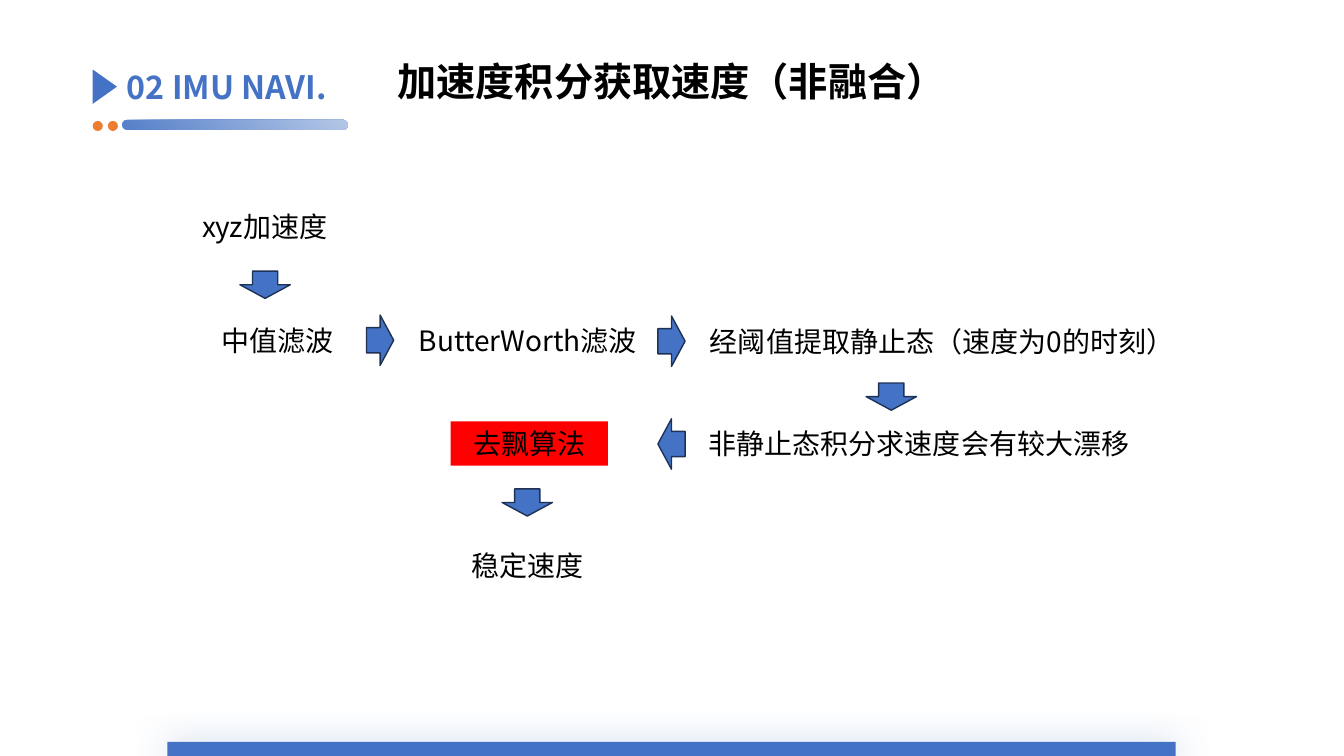
from lxml import etree
from pptx import Presentation
from pptx.dml.color import RGBColor
from pptx.enum import shapes, text
from pptx.oxml import ns
from pptx.util import Inches, Pt

FONT = "Noto Sans CJK SC"
COLORS = {
    "blue": "4472C4", "navy": "1E3256", "orange": "ED7D31", "red": "FF0000",
    "black": "000000", "bar_start": "557FC9", "bar_end": "B4C7E7",
}
KINDS = shapes.MSO_SHAPE


def add_figure(kind, box, fill, rotation=0, outline=None):
    figure = slide.shapes.add_shape(kind, *map(Inches, box))
    figure.shadow.inherit = False
    figure.rotation = rotation
    figure.fill.solid()
    figure.fill.fore_color.rgb = RGBColor.from_string(COLORS[fill])
    if outline:
        figure.line.color.rgb = RGBColor.from_string(COLORS[outline])
        figure.line.width = Pt(1)
    else:
        figure.line.fill.background()
    return figure


def write(holder, words, size, color="black", bold=False, centred=True):
    frame = holder.text_frame
    frame.word_wrap = True
    if centred:
        frame.auto_size = text.MSO_AUTO_SIZE.SHAPE_TO_FIT_TEXT
    else:
        frame.vertical_anchor = text.MSO_ANCHOR.MIDDLE
    paragraph = frame.paragraphs[0]
    paragraph.alignment = text.PP_ALIGN.CENTER if centred else text.PP_ALIGN.LEFT
    run = paragraph.add_run()
    run.text = words
    run.font.color.rgb = RGBColor.from_string(COLORS[color])
    for key, value in {"size": Pt(size), "bold": bold, "name": FONT}.items():
        setattr(run.font, key, value)
    east_asian = etree.SubElement(run.font._element, ns.qn("a:ea"))
    east_asian.set("typeface", FONT)


deck = Presentation()
deck.slide_width, deck.slide_height = Inches(13.33), Inches(7.5)
slide = deck.slides.add_slide(deck.slide_layouts[6])

# Footer band with a soft glow
footer = add_figure(KINDS.RECTANGLE, (6.59, 2.43, 0.14, 10), "blue", 90)
effects = footer._element.spPr.find(ns.qn("a:effectLst"))
glow = etree.SubElement(effects, ns.qn("a:outerShdw"), blurRad=str(Pt(28)),
                        dist=str(Pt(3)), dir="5400000", algn="t", rotWithShape="0")
glow_color = etree.SubElement(glow, ns.qn("a:srgbClr"), val=COLORS["blue"])
etree.SubElement(glow_color, ns.qn("a:alpha"), val="40000")

# Section label
add_figure(KINDS.ISOSCELES_TRIANGLE, (0.87, 0.74, 0.34, 0.24), "blue", 90)
section = slide.shapes.add_textbox(*map(Inches, (1.16, 0.53, 3.62, 0.65)))
write(section, "02 IMU NAVI.", 23, "blue", bold=True, centred=False)
for dot_left in (0.92, 1.07):
    add_figure(KINDS.OVAL, (dot_left, 1.2, 0.1, 0.1), "orange")

# Gradient underline
underline = add_figure(KINDS.ROUNDED_RECTANGLE, (1.21, 1.19, 2.24, 0.1), "blue")
underline.adjustments[0] = 0.5
underline._element.spPr.xfrm.set("flipV", "1")
underline.fill.gradient()
underline.fill.gradient_angle = 315
for stop, position, color in zip(underline.fill.gradient_stops, (0, 1),
                                 ("bar_start", "bar_end")):
    stop.position = position
    stop.color.rgb = RGBColor.from_string(COLORS[color])

# Title
title = slide.shapes.add_textbox(*map(Inches, (3.74, 0.52, 5.84, 0.57)))
write(title, "加速度积分获取速度（非融合）", 28, bold=True)

# Processing steps: left, top, width, wording
STEP_HEIGHT = 0.44
steps = [
    (1.52, 2.03, 2.21, "xyz加速度"),
    (2.04, 3.16, 1.42, "中值滤波"),
    (3.93, 3.16, 2.61, "ButterWorth滤波"),
    (6.82, 3.17, 5.05, "经阈值提取静止态（速度为0的时刻）"),
    (6.82, 4.18, 4.59, "非静止态积分求速度会有较大漂移"),
    (3.93, 5.39, 2.61, "稳定速度"),
]
for left, top, width, words in steps:
    step = slide.shapes.add_textbox(*map(Inches, (left, top, width, STEP_HEIGHT)))
    write(step, words, 20)

# Highlighted step
drift_removal = add_figure(KINDS.RECTANGLE, (4.47, 4.18, 1.56, STEP_HEIGHT), "red")
write(drift_removal, "去飘算法", 20)

# Flow arrows: left, top, rotation (0 down, 270 right, 90 left)
flow = [
    (2.38, 2.69, 0), (3.52, 3.24, 270), (6.41, 3.25, 270),
    (8.59, 3.8, 0), (6.41, 4.27, 90), (4.98, 4.85, 0),
]
for left, top, rotation in flow:
    add_figure(KINDS.DOWN_ARROW, (left, top, 0.5, 0.27), "blue", rotation, "navy")

deck.save("out.pptx")
